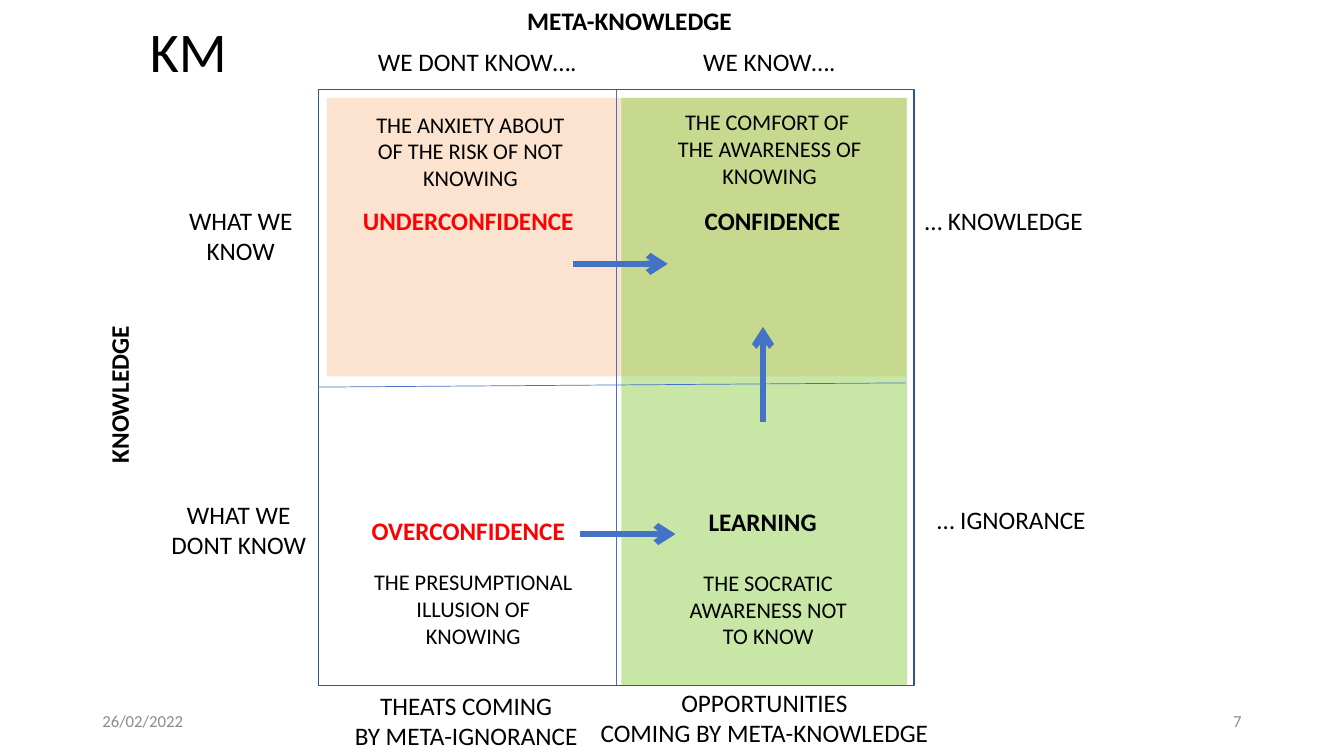
from lxml import etree
from pptx import Presentation
from pptx.dml.color import RGBColor
from pptx.enum.shapes import MSO_CONNECTOR, MSO_SHAPE
from pptx.enum.text import MSO_ANCHOR, MSO_AUTO_SIZE, PP_ALIGN
from pptx.oxml.ns import qn
from pptx.util import Pt

STRAIGHT = MSO_CONNECTOR.STRAIGHT
RECTANGLE = MSO_SHAPE.RECTANGLE
MIDDLE, TOP = MSO_ANCHOR.MIDDLE, MSO_ANCHOR.TOP
FIT, FIXED = MSO_AUTO_SIZE.SHAPE_TO_FIT_TEXT, MSO_AUTO_SIZE.NONE
LEFT, CENTER, RIGHT = PP_ALIGN.LEFT, PP_ALIGN.CENTER, PP_ALIGN.RIGHT

FONT = "Calibri"
BLACK, RED, GREY = "000000", "FF0000", "8C8C8C"
ORANGE, GREEN = "FAC090", "92D050"
BORDER, BLUE = "325491", "4472C4"


def color(value):
    """Turn a hex string into a colour."""
    return RGBColor.from_string(value)


def add_text(slide, box, lines, size=18, ink=BLACK, bold=False, align=CENTER,
             wrap=False, anchor=TOP, fit=FIT):
    """Write one paragraph per line in a text box and return the box."""
    label = slide.shapes.add_textbox(*map(Pt, box))
    frame = label.text_frame
    frame.word_wrap, frame.auto_size, frame.vertical_anchor = wrap, fit, anchor
    for index, line in enumerate(lines):
        paragraph = frame.add_paragraph() if index else frame.paragraphs[0]
        paragraph.alignment = align
        run = paragraph.add_run()
        run.text = line
        run.font.name, run.font.size, run.font.bold = FONT, Pt(size), bold
        run.font.color.rgb = color(ink)
    return label


def add_panel(slide, box, fill=None, alpha=100, line=None):
    """Draw a rectangle with a translucent fill or a border."""
    panel = slide.shapes.add_shape(RECTANGLE, *map(Pt, box))
    panel.shadow.inherit = False
    if fill:
        panel.fill.solid()
        panel.fill.fore_color.rgb = color(fill)
        tint = panel.fill._xPr.find(".//" + qn("a:srgbClr"))
        etree.SubElement(tint, qn("a:alpha"), val=str(alpha * 1000))
    else:
        panel.fill.background()
    if line:
        panel.line.color.rgb = color(line)
        panel.line.width = Pt(1)
    else:
        panel.line.fill.background()


def add_line(slide, ends, width, arrow=False):
    """Draw a straight blue line, with an arrowhead at its end if asked."""
    link = slide.shapes.add_connector(STRAIGHT, *map(Pt, ends))
    link.line.color.rgb = color(BLUE)
    link.line.width = Pt(width)
    if arrow:
        etree.SubElement(link.line._get_or_add_ln(), qn("a:tailEnd"), type="arrow")
    etree.SubElement(link._element.spPr, qn("a:effectLst"))


def add_footer(slide, left, top, width, date, number):
    """Place the date and the page number at the two ends of the footer."""
    for x, text, align in ((left, date, LEFT), (left + width - 216, number, RIGHT)):
        add_text(slide, (x, top, 216, 28.8), [text], 12, GREY, align=align,
                 wrap=True, anchor=MIDDLE, fit=FIXED)


def add_grid(slide, left, top, side):
    """Draw the tinted panels, the border and the dividers of the matrix."""
    half = side / 2
    add_panel(slide, (left + 6, top + 6, side - 11.5, 199), ORANGE, 43)
    add_panel(slide, (left + half + 3.5, top + 6, 204, side - 6), GREEN, 50)
    add_panel(slide, (left, top, side, side), line=BORDER)
    add_line(slide, (left, top + 212.5, left + side - 5.5, top + 209.5), 0.5)
    add_line(slide, (left + half, top, left + half, top + side), 0.5)


def add_quadrant(slide, left, top, heading, heading_box, note, note_box, ink):
    """Place the heading and the note of one quadrant."""
    x, y, width = heading_box
    add_text(slide, (left + x, top + y, width, 29), [heading], ink=ink, bold=True)
    x, y, width = note_box
    add_text(slide, (left + x, top + y, width, 65.5), [note], 16, wrap=True)


def add_quadrants(slide, left, top, side):
    """Fill the four quadrants and join them with arrows."""
    quadrants = (
        (0, 0, "UNDERCONFIDENCE", (24, 79, 166),
         "THE ANXIETY ABOUT OF THE RISK OF NOT KNOWING", (26, 11.5, 165), RED),
        (1, 0, "CONFIDENCE", (56, 79, 111),
         "THE COMFORT OF  THE AWARENESS OF KNOWING", (27.5, 10, 164), BLACK),
        (0, 1, "OVERCONFIDENCE", (30.5, 87.5, 153),
         "THE PRESUMPTIONAL ILLUSION OF KNOWING", (28, 125.5, 165), RED),
        (1, 1, "LEARNING", (58.5, 81.5, 92),
         "THE SOCRATIC AWARENESS NOT TO KNOW", (44, 126, 129), BLACK),
    )
    for column, row, *content in quadrants:
        add_quadrant(slide, left + column * side / 2, top + row * side / 2, *content)
    for x, y, across, down in ((181.5, 124.5, 68, 0), (317.5, 237.5, 0, -68),
                               (187, 317.5, 68, 0)):
        add_line(slide, (left + x, top + y, left + x + across, top + y + down),
                 4.5, arrow=True)


def add_axes(slide, left, top, side):
    """Place the axis titles and the labels around the matrix."""
    labels = (
        (-100, 79, 89, "WHAT WE", "KNOW"),
        (-113, 289, 112, "WHAT WE", "DONT KNOW"),
        (18, side, 175, "THEATS COMING", "BY META-IGNORANCE"),
        (193.5, side - 2, 250, "OPPORTUNITIES", "COMING BY META-KNOWLEDGE"),
        (34.5, -34.5, 158, "WE DONT KNOW…."),
        (267, -34.5, 110, "WE KNOW…."),
        (side, 79, 128, "… KNOWLEDGE"),
        (side + 8.5, 293, 122, "… IGNORANCE"),
    )
    for x, y, width, *lines in labels:
        add_text(slide, (left + x, top + y, width, 7.5 + 21.75 * len(lines)), lines)
    titles = ((142, -64, 162, "META-KNOWLEDGE", 0), (-199.5, 202.5, 114, "KNOWLEDGE", 270))
    for x, y, width, title, turn in titles:
        axis = add_text(slide, (left + x, top + y, width, 29), [title], bold=True, align=LEFT)
        axis.rotation = turn


def main():
    """Build the knowledge matrix slide."""
    deck = Presentation()
    deck.slide_width, deck.slide_height = Pt(960), Pt(540)
    slide = deck.slides.add_slide(deck.slide_layouts[6])
    matrix = (227.5, 64, 425.5)
    add_footer(slide, 66, 500.5, 828, "26/02/2022", "7")
    add_grid(slide, *matrix)
    add_quadrants(slide, *matrix)
    add_axes(slide, *matrix)
    add_text(slide, (100, 8, 70, 55.5), ["KM"], 40, align=LEFT)
    deck.save("out.pptx")


if __name__ == "__main__":
    main()
